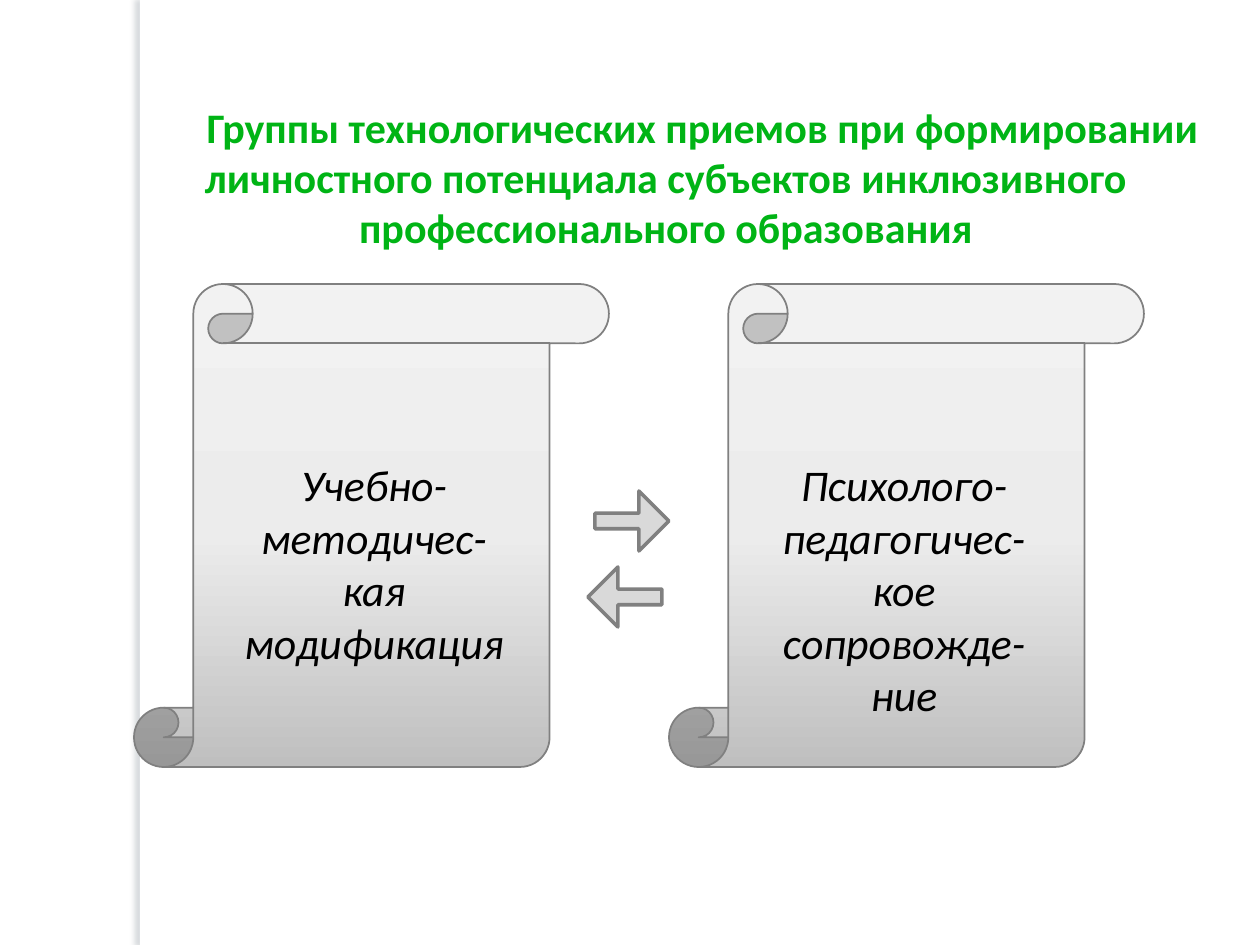
import copy

import pptx
import pptx.dml.color
import pptx.enum.shapes
import pptx.enum.text
import pptx.oxml
import pptx.oxml.ns
import pptx.util

RGBColor = pptx.dml.color.RGBColor
SHAPE = pptx.enum.shapes.MSO_SHAPE
qn = pptx.oxml.ns.qn

WHITE = RGBColor(0xFF, 0xFF, 0xFF)
BLACK = RGBColor(0x00, 0x00, 0x00)
GREEN = RGBColor(0x00, 0xB4, 0x15)
OUTLINE = RGBColor(0x80, 0x80, 0x80)
ARROW_FILL = RGBColor(0xD9, 0xD9, 0xD9)
SCROLL_STOPS = [
    (0, RGBColor(0xF2, 0xF2, 0xF2)),
    (0.52, RGBColor(0xEC, 0xEC, 0xEC)),
    (1, RGBColor(0xBF, 0xBF, 0xBF)),
]
FONT = "Calibri"
PX_PER_INCH = 126
STRIP_SHADOW = (
    '<a:effectLst xmlns:a="http://schemas.openxmlformats.org/drawingml/2006/main">'
    '<a:outerShdw blurRad="38100" dist="38100" dir="10800000" rotWithShape="0">'
    '<a:srgbClr val="697580"><a:alpha val="25000"/></a:srgbClr>'
    "</a:outerShdw></a:effectLst>"
)


def px(length):
    return pptx.util.Emu(round(length * 914400 / PX_PER_INCH))


def add_shape(page, kind, box, line_width):
    shape = page.shapes.add_shape(kind, *map(px, box))
    shape.shadow.inherit = False
    if line_width:
        shape.line.color.rgb = OUTLINE
        shape.line.width = pptx.util.Pt(line_width)
    else:
        shape.line.fill.background()
    return shape


def add_text(page, box, text, size, color, bold=False, italic=False, indent=0):
    frame = page.shapes.add_textbox(*map(px, box)).text_frame
    frame.word_wrap = True
    frame.auto_size = pptx.enum.text.MSO_AUTO_SIZE.SHAPE_TO_FIT_TEXT
    para = frame.paragraphs[0]
    para.alignment = pptx.enum.text.PP_ALIGN.CENTER
    if indent:
        para._p.get_or_add_pPr().set("indent", str(px(indent)))
    span = para.add_run()
    span.text = text
    font = span.font
    font.name = FONT
    font.size = pptx.util.Pt(size)
    font.bold = bold
    font.italic = italic
    font.color.rgb = color


def add_side_strip(page, box):
    strip = add_shape(page, SHAPE.RECTANGLE, box, 0)
    strip.fill.solid()
    strip.fill.fore_color.rgb = WHITE
    properties = strip._element.spPr
    properties.remove(properties.find(qn("a:effectLst")))
    properties.append(pptx.oxml.parse_xml(STRIP_SHADOW))


def add_title(page, box):
    text = (
        "Группы технологических приемов при формировании личностного "
        "потенциала субъектов инклюзивного профессионального образования"
    )
    add_text(page, box, text, 24, GREEN, bold=True, indent=73)


def add_scroll(page, box, text, inset, text_height):
    left, top, width, height = box
    scroll = add_shape(page, SHAPE.VERTICAL_SCROLL, box, 1)
    scroll.fill.gradient()
    scroll.fill.gradient_angle = 270
    stop_list = scroll._element.spPr.find(".//" + qn("a:gsLst"))
    stop_list.append(copy.deepcopy(stop_list[0]))
    for stop, (position, color) in zip(scroll.fill.gradient_stops, SCROLL_STOPS):
        stop.position = position
        stop.color.rgb = color
    text_box = (left + inset, top + 168, 312, text_height)
    add_text(page, text_box, text, 25, BLACK, italic=True)


def add_exchange_arrows(page, box):
    left, top, width, height = box
    arrow_width, arrow_height = 74, 60
    forward = (left + width - arrow_width, top, arrow_width, arrow_height)
    backward = (left, top + height - arrow_height, arrow_width, arrow_height)
    for arrow_box, flipped in ((forward, False), (backward, True)):
        arrow = add_shape(page, SHAPE.RIGHT_ARROW, arrow_box, 2)
        arrow.adjustments[0] = 0.26
        arrow.adjustments[1] = 0.5
        arrow.fill.solid()
        arrow.fill.fore_color.rgb = ARROW_FILL
        if flipped:
            arrow._element.spPr.find(qn("a:xfrm")).set("flipH", "1")


def main():
    deck = pptx.Presentation()
    deck.slide_width = px(1260)
    deck.slide_height = px(945)
    page = deck.slides.add_slide(deck.slide_layouts[6])
    add_side_strip(page, (140, 0, 10, 945))
    add_title(page, (95, 95, 1142, 165))
    add_scroll(page, (134, 284, 475, 483), "Учебно-методичес-кая модификация", 84, 223)
    add_scroll(page, (669, 284, 475, 483), "Психолого-педагогичес-кое сопровожде-ние", 79, 275)
    add_exchange_arrows(page, (588, 491, 81, 136))
    deck.save("out.pptx")


if __name__ == "__main__":
    main()
